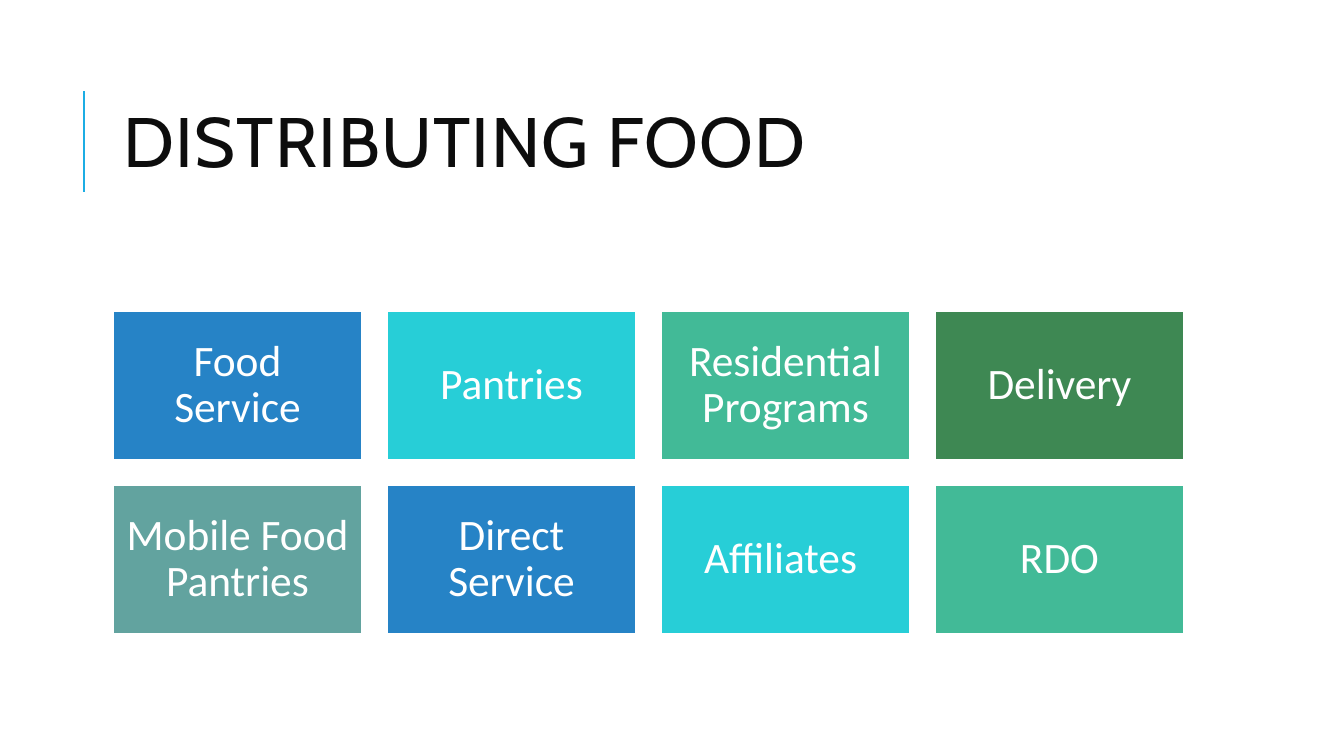
from lxml import etree
from pptx import Presentation
from pptx import util as u
from pptx.dml.color import RGBColor
from pptx.enum import shapes, text
from pptx.oxml.ns import qn

TITLE = "DISTRIBUTING FOOD"
CHANNELS = [
    ("Food Service", "blue"),
    ("Pantries", "cyan"),
    ("Residential Programs", "mint"),
    ("Delivery", "green"),
    ("Mobile Food Pantries", "sage"),
    ("Direct Service", "blue"),
    ("Affiliates ", "cyan"),
    ("RDO", "mint"),
]
COLORS = {
    "accent": "1CADE4", "ink": "0D0D0D", "white": "FFFFFF",
    "blue": "2683C6", "cyan": "27CED7", "mint": "42BA97",
    "green": "3E8853", "sage": "62A39F",
}
PX = 9071
COLUMNS = 4
LEFT, TOP = 113, 311
BOX_W, BOX_H = 249, 149
GAP_X, GAP_Y = 25, 25
INSET = 13


def px(n):
    return u.Emu(n * PX)


def color(name):
    return RGBColor.from_string(COLORS[name])


def write(tf, words, font, size, ink, align, spacing):
    tf.word_wrap = True
    tf.auto_size = text.MSO_AUTO_SIZE.NONE
    tf.vertical_anchor = text.MSO_ANCHOR.MIDDLE
    p = tf.paragraphs[0]
    p.alignment = align
    p.line_spacing = spacing
    r = p.add_run()
    r.text = words
    r.font.name = font
    r.font.size = u.Pt(size)
    r.font.color.rgb = color(ink)
    return r


def add_title(s):
    rule = s.shapes.add_connector(
        shapes.MSO_CONNECTOR.STRAIGHT, px(84), px(192), px(84), px(91))
    rule.line.color.rgb = color("accent")
    rule.line.width = u.Pt(1.5)
    etree.SubElement(rule._element.spPr, qn("a:effectLst"))

    title = s.shapes.title
    title.left, title.top, title.width, title.height = map(px, (113, 65, 1072, 165))
    r = write(title.text_frame, TITLE, "Cabin", 50, "ink", text.PP_ALIGN.LEFT, 0.8)
    r.font._element.set("spc", "100")


def add_channel(s, index, words, fill):
    row, col = divmod(index, COLUMNS)
    left = LEFT + col * (BOX_W + GAP_X)
    top = TOP + row * (BOX_H + GAP_Y)
    sp = s.shapes.add_shape(
        shapes.MSO_SHAPE.RECTANGLE, px(left), px(top), px(BOX_W), px(BOX_H))
    sp.shadow.inherit = False
    sp.fill.solid()
    sp.fill.fore_color.rgb = color(fill)
    sp.line.color.rgb = color("white")
    sp.line.width = u.Pt(1.25)
    tf = sp.text_frame
    tf.margin_left = tf.margin_right = tf.margin_top = tf.margin_bottom = px(INSET)
    write(tf, words, "Calibri", 31, "white", text.PP_ALIGN.CENTER, 0.9)


def main():
    prs = Presentation()
    prs.slide_width, prs.slide_height = px(1344), px(756)
    s = prs.slides.add_slide(prs.slide_layouts[5])
    add_title(s)
    for index, (words, fill) in enumerate(CHANNELS):
        add_channel(s, index, words, fill)
    prs.save("out.pptx")


if __name__ == "__main__":
    main()
